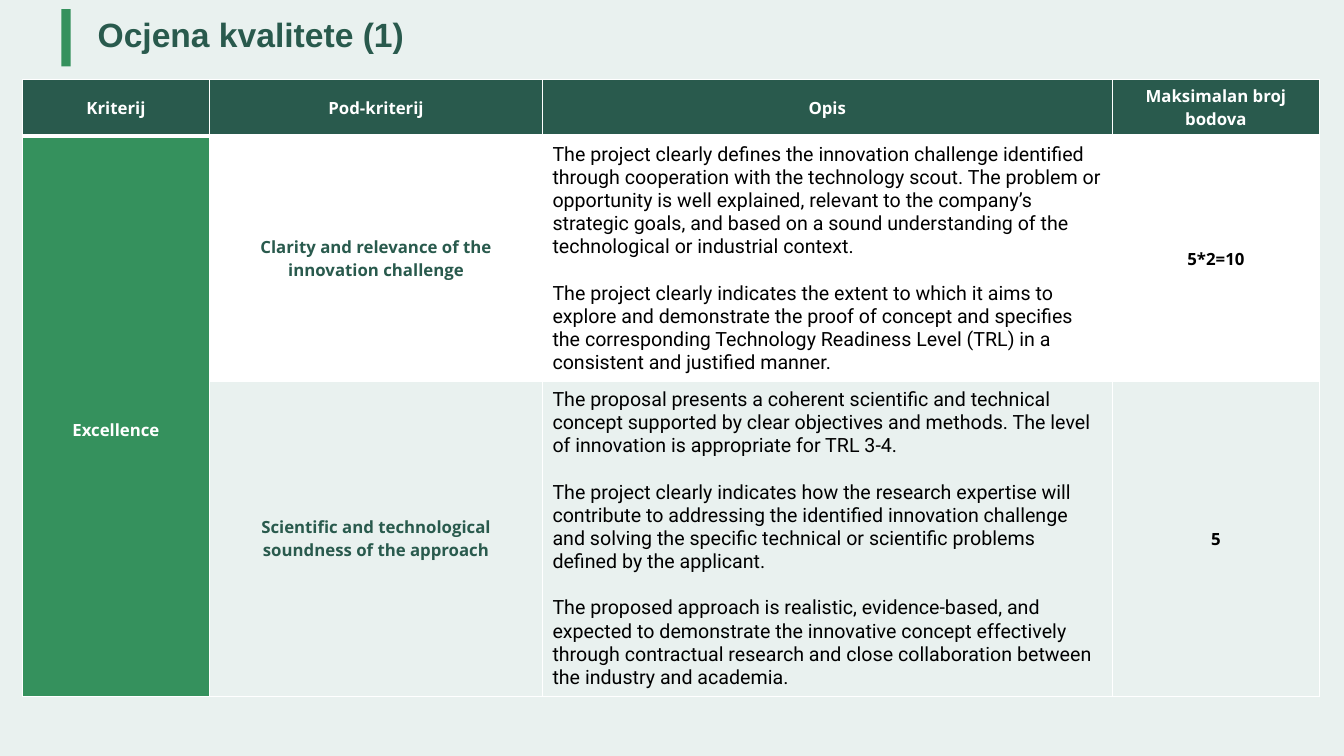
"""Build the quality assessment slide with its table of criteria."""
from lxml import etree
from pptx import Presentation
from pptx.dml.color import RGBColor
from pptx.enum.shapes import MSO_SHAPE
from pptx.enum.text import MSO_ANCHOR, PP_ALIGN
from pptx.oxml.ns import qn
from pptx.util import Inches, Pt

PALE, DARK, GREEN, WHITE, BLACK = "E9F1EF", "295A4D", "35915D", "FFFFFF", "000000"

TITLE = "Ocjena kvalitete (1)"
HEADINGS = ["Kriterij", "Pod-kriterij", "Opis", "Maksimalan broj bodova"]
CRITERION = "Excellence"
SUBCRITERIA = [
    ("Clarity and relevance of the innovation challenge",
     ["The project clearly defines the innovation challenge identified through cooperation with "
      "the technology scout. The problem or opportunity is well explained, relevant to the "
      "company’s strategic goals, and based on a sound understanding of the technological or "
      "industrial context.",
      "The project clearly indicates the extent to which it aims to explore and demonstrate the "
      "proof of concept and specifies the corresponding Technology Readiness Level (TRL) in a "
      "consistent and justified manner."],
     "5*2=10", WHITE),
    ("Scientific and technological soundness of the approach",
     ["The proposal presents a coherent scientific and technical concept supported by clear "
      "objectives and methods. The level of innovation is appropriate for TRL 3-4.",
      "The project clearly indicates how the research expertise will contribute to addressing "
      "the identified innovation challenge and solving the specific technical or scientific "
      "problems defined by the applicant.",
      "The proposed approach is realistic, evidence-based, and expected to demonstrate the "
      "innovative concept effectively through contractual research and close collaboration "
      "between the industry and academia."],
     "5", PALE),
]
COLUMN_WIDTHS = [1.86, 3.3, 5.65, 2.06]
ROW_HEIGHTS = [0.56, 2.4, 3.08]


def rgb(value):
    return RGBColor.from_string(value)


def write(frame, *paragraphs, size=12, font="Open Sans", color=WHITE, bold=True,
          align=PP_ALIGN.CENTER, gap=0, line=1.0):
    for index, text in enumerate(paragraphs):
        paragraph = frame.add_paragraph() if index else frame.paragraphs[0]
        paragraph.alignment = align
        paragraph.line_spacing = line
        if index:
            paragraph.space_before = Pt(gap)
        run = paragraph.add_run()
        run.text = text
        run.font.size = Pt(size)
        run.font.name = font
        run.font.bold = bold
        run.font.color.rgb = rgb(color)


def fill_cell(cell, fill, *paragraphs, bottom=1, **text_format):
    properties = cell._tc.get_or_add_tcPr()
    for side, width in (("L", 1), ("R", 1), ("T", 1), ("B", bottom)):
        border = etree.SubElement(properties, qn(f"a:ln{side}"), w=str(Pt(width)))
        paint = etree.SubElement(border, qn("a:solidFill"))
        etree.SubElement(paint, qn("a:srgbClr"), val=WHITE)
    cell.fill.solid()
    cell.fill.fore_color.rgb = rgb(fill)
    cell.vertical_anchor = MSO_ANCHOR.MIDDLE
    write(cell.text_frame, *paragraphs, **text_format)


def add_title(slide):
    title = slide.shapes.add_textbox(Inches(0.87), Inches(0.13), Inches(10.71), Inches(0.47))
    title.text_frame.word_wrap = True
    title.text_frame.vertical_anchor = MSO_ANCHOR.MIDDLE
    write(title.text_frame, TITLE, size=24, font="Arial", color=DARK,
          align=PP_ALIGN.LEFT, line=0.9)
    accent = slide.shapes.add_shape(MSO_SHAPE.RECTANGLE, Inches(0.61), Inches(0.09),
                                    Inches(0.09), Inches(0.57))
    accent.shadow.inherit = False
    accent.fill.solid()
    accent.fill.fore_color.rgb = rgb(GREEN)
    accent.line.fill.background()


def add_criteria(slide):
    criteria = slide.shapes.add_table(
        len(ROW_HEIGHTS), len(COLUMN_WIDTHS), Inches(0.22), Inches(0.79),
        Inches(sum(COLUMN_WIDTHS)), Inches(sum(ROW_HEIGHTS))).table
    criteria.horz_banding = False
    for column, width in zip(criteria.columns, COLUMN_WIDTHS):
        column.width = Inches(width)
    for row, height in zip(criteria.rows, ROW_HEIGHTS):
        row.height = Inches(height)
    for column, heading in enumerate(HEADINGS):
        fill_cell(criteria.cell(0, column), DARK, heading, bottom=3)
    criterion = criteria.cell(1, 0)
    criterion.merge(criteria.cell(len(SUBCRITERIA), 0))
    fill_cell(criterion, GREEN, CRITERION)
    criterion.margin_top = Inches(0.32)
    for row, (name, description, points, fill) in enumerate(SUBCRITERIA, 1):
        fill_cell(criteria.cell(row, 1), fill, name, color=DARK)
        fill_cell(criteria.cell(row, 2), fill, *description, size=14, font="Roboto",
                  color=BLACK, bold=False, align=PP_ALIGN.LEFT, gap=16.5)
        fill_cell(criteria.cell(row, 3), fill, points, color=BLACK)


def main():
    deck = Presentation()
    deck.slide_width, deck.slide_height = Inches(13.33), Inches(7.5)
    slide = deck.slides.add_slide(deck.slide_layouts[6])
    slide.background.fill.solid()
    slide.background.fill.fore_color.rgb = rgb(PALE)
    add_title(slide)
    add_criteria(slide)
    deck.save("out.pptx")


if __name__ == "__main__":
    main()
